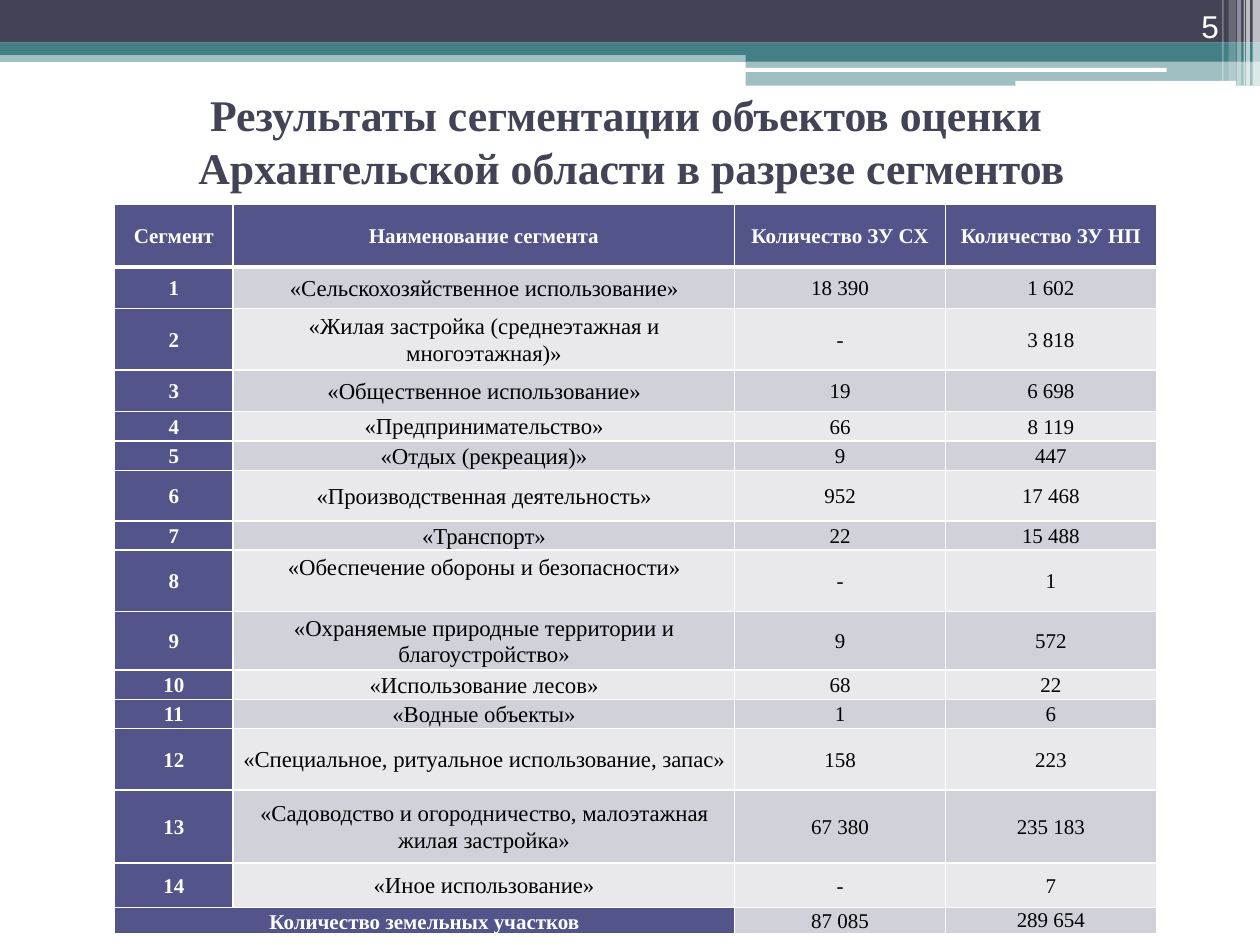
from dataclasses import dataclass

from lxml.etree import SubElement
from pptx import Presentation
from pptx.dml.color import RGBColor
from pptx.enum.shapes import MSO_SHAPE
from pptx.enum.text import MSO_ANCHOR, PP_ALIGN
from pptx.oxml.ns import qn
from pptx.util import Cm, Pt


@dataclass(frozen=True)
class Theme:
    navy: str = "424456"
    teal: str = "438086"
    white: str = "FFFFFF"
    black: str = "000000"
    purple: str = "53548A"
    bands: tuple = ("E9E9ED", "D1D1DA")
    serif: str = "Times New Roman"
    sans: str = "Arial"
    title_size: int = 25
    page_size: int = 18
    name_size: int = 13
    cell_size: int = 12


@dataclass(frozen=True)
class Bar:
    left: float
    top: float
    width: float
    height: float
    color: str
    opacity: int = 100
    rounded: bool = False


@dataclass(frozen=True)
class Segment:
    height: float
    name: str
    farm_plots: str
    town_plots: str
    bottom_gap: float = 0


THEME = Theme()

BARS = [
    # Horizontal bands
    Bar(0, 1.02, 25.4, 0.23, THEME.teal, 50),
    Bar(0, 0, 25.4, 0.86, THEME.navy),
    Bar(0, 0.86, 25.4, 0.25, THEME.teal),
    Bar(15.03, 0.99, 10.37, 0.25, THEME.teal),
    Bar(15.03, 1.23, 10.37, 0.5, THEME.teal, 50),
    Bar(15.01, 1.37, 8.51, 0.08, THEME.white, rounded=True),
    Bar(20.47, 1.63, 4.45, 0.1, THEME.white, rounded=True),
    # Vertical stripes in the corner
    Bar(25.25, 0, 0.15, 1.73, THEME.white, 65),
    Bar(25.12, 0, 0.08, 1.73, THEME.white, 65),
    Bar(25.07, 0, 0.03, 1.73, THEME.white, 60),
    Bar(24.94, 0, 0.08, 1.73, THEME.white, 40),
    Bar(24.77, 0, 0.15, 1.63, THEME.white, 20),
    Bar(24.64, 0, 0.03, 1.63, THEME.white, 30),
]

COLUMN_WIDTHS = [2.39, 10.11, 4.25, 4.25]
HEADINGS = ["Сегмент", "Наименование сегмента", "Количество ЗУ СХ", "Количество ЗУ НП"]
HEADING_HEIGHT = 1.27
TOTAL_HEIGHT = 0.53
TOTALS = ["87 085", "289 654"]
SEGMENTS = [
    Segment(0.84, "«Сельскохозяйственное использование»", "18 390", "1 602"),
    Segment(1.24, "«Жилая застройка (среднеэтажная и многоэтажная)»", "-", "3 818"),
    Segment(0.84, "«Общественное использование»", "19", "6 698"),
    Segment(0.53, "«Предпринимательство»", "66", "8 119"),
    Segment(0.53, "«Отдых (рекреация)»", "9", "447"),
    Segment(1.02, "«Производственная деятельность»", "952", "17 468"),
    Segment(0.53, "«Транспорт»", "22", "15 488"),
    Segment(1.24, "«Обеспечение обороны и безопасности»", "-", "1", bottom_gap=0.56),
    Segment(1.14, "«Охраняемые природные территории и благоустройство»", "9", "572"),
    Segment(0.53, "«Использование лесов»", "68", "22"),
    Segment(0.53, "«Водные объекты»", "1", "6"),
    Segment(1.24, "«Специальное, ритуальное использование, запас»", "158", "223"),
    Segment(1.47, "«Садоводство и огородничество, малоэтажная жилая застройка»", "67 380", "235 183"),
    Segment(0.89, "«Иное использование»", "-", "7"),
]


def style_paragraph(para, align, font: str, size: int, color: str, bold: bool = False) -> None:
    para.alignment = align
    para.font.name = font
    para.font.size = Pt(size)
    para.font.bold = bold
    para.font.color.rgb = RGBColor.from_string(color)


def add_bar(page, bar: Bar) -> None:
    kind = MSO_SHAPE.ROUNDED_RECTANGLE if bar.rounded else MSO_SHAPE.RECTANGLE
    shape = page.shapes.add_shape(kind, Cm(bar.left), Cm(bar.top), Cm(bar.width), Cm(bar.height))
    shape.shadow.inherit = False
    shape.line.fill.background()
    shape.fill.solid()
    shape.fill.fore_color.rgb = RGBColor.from_string(bar.color)
    if bar.opacity < 100:
        color = next(shape.fill._xPr.iter(qn("a:srgbClr")))
        SubElement(color, qn("a:alpha"), val=str(bar.opacity * 1000))


def add_text(page, text: str, left: float, top: float, width: float, height: float, anchor):
    box = page.shapes.add_textbox(Cm(left), Cm(top), Cm(width), Cm(height))
    frame = box.text_frame
    frame.word_wrap = True
    frame.vertical_anchor = anchor
    para = frame.paragraphs[0]
    para.text = text
    return para


def set_borders(cell, top: int = 1, bottom: int = 1) -> None:
    properties = cell._tc.get_or_add_tcPr()
    for side, width in (("L", 1), ("R", 1), ("T", top), ("B", bottom)):
        line = SubElement(properties, qn(f"a:ln{side}"), w=str(Pt(width)))
        fill = SubElement(line, qn("a:solidFill"))
        SubElement(fill, qn("a:srgbClr"), val=THEME.white)


def fill_cell(cell, text: str, fill: str, size: int = THEME.cell_size, label: bool = False,
              side_margin: float = 0.13, anchor=MSO_ANCHOR.MIDDLE) -> None:
    cell.fill.solid()
    cell.fill.fore_color.rgb = RGBColor.from_string(fill)
    cell.margin_left = cell.margin_right = Cm(side_margin)
    cell.margin_top = cell.margin_bottom = 0
    cell.vertical_anchor = anchor
    para = cell.text_frame.paragraphs[0]
    para.text = text
    para.line_spacing = 1.07
    color = THEME.white if label else THEME.black
    style_paragraph(para, PP_ALIGN.CENTER, THEME.serif, size, color, bold=label)


def add_segment_table(page) -> None:
    heights = [HEADING_HEIGHT, *(segment.height for segment in SEGMENTS), TOTAL_HEIGHT]
    last = len(heights) - 1
    table = page.shapes.add_table(len(heights), len(COLUMN_WIDTHS), Cm(2.31), Cm(4.11),
                                  Cm(sum(COLUMN_WIDTHS)), Cm(sum(heights))).table
    table.horz_banding = False
    for column, width in zip(table.columns, COLUMN_WIDTHS):
        column.width = Cm(width)
    for index, (row, height) in enumerate(zip(table.rows, heights)):
        row.height = Cm(height)
        for cell in row.cells:
            set_borders(cell, top=3 if index == 1 else 1, bottom=3 if index == 0 else 1)

    # Heading row
    for column, heading in enumerate(HEADINGS):
        fill_cell(table.cell(0, column), heading, THEME.purple, label=True, side_margin=0.18)

    # Segment rows
    for number, segment in enumerate(SEGMENTS, start=1):
        band = THEME.bands[number % 2]
        fill_cell(table.cell(number, 0), str(number), THEME.purple, label=True)
        fill_cell(table.cell(number, 1), segment.name, band, THEME.name_size)
        table.cell(number, 1).margin_bottom = Cm(segment.bottom_gap)
        fill_cell(table.cell(number, 2), segment.farm_plots, band)
        fill_cell(table.cell(number, 3), segment.town_plots, band)

    # Total row
    table.cell(last, 0).merge(table.cell(last, 1))
    fill_cell(table.cell(last, 0), "Количество земельных участков", THEME.purple,
              label=True, anchor=MSO_ANCHOR.BOTTOM)
    anchors = (MSO_ANCHOR.MIDDLE, MSO_ANCHOR.TOP)
    for column, (total, anchor) in enumerate(zip(TOTALS, anchors), start=2):
        fill_cell(table.cell(last, column), total, THEME.bands[last % 2], anchor=anchor)


def main() -> None:
    deck = Presentation()
    deck.slide_width, deck.slide_height = Cm(25.4), Cm(19.05)
    page = deck.slides.add_slide(deck.slide_layouts[6])

    # Header decoration
    for bar in BARS:
        add_bar(page, bar)

    # Title and page number
    title = add_text(page, "Результаты сегментации объектов оценки \vАрхангельской области в разрезе сегментов",
                     1.3, 1.93, 22.86, 1.8, MSO_ANCHOR.MIDDLE)
    style_paragraph(title, PP_ALIGN.CENTER, THEME.serif, THEME.title_size, THEME.navy, bold=True)
    number = add_text(page, "5", 22.71, 0, 2.11, 1.02, MSO_ANCHOR.BOTTOM)
    style_paragraph(number, PP_ALIGN.RIGHT, THEME.sans, THEME.page_size, THEME.white)

    add_segment_table(page)
    deck.save("out.pptx")


if __name__ == "__main__":
    main()
